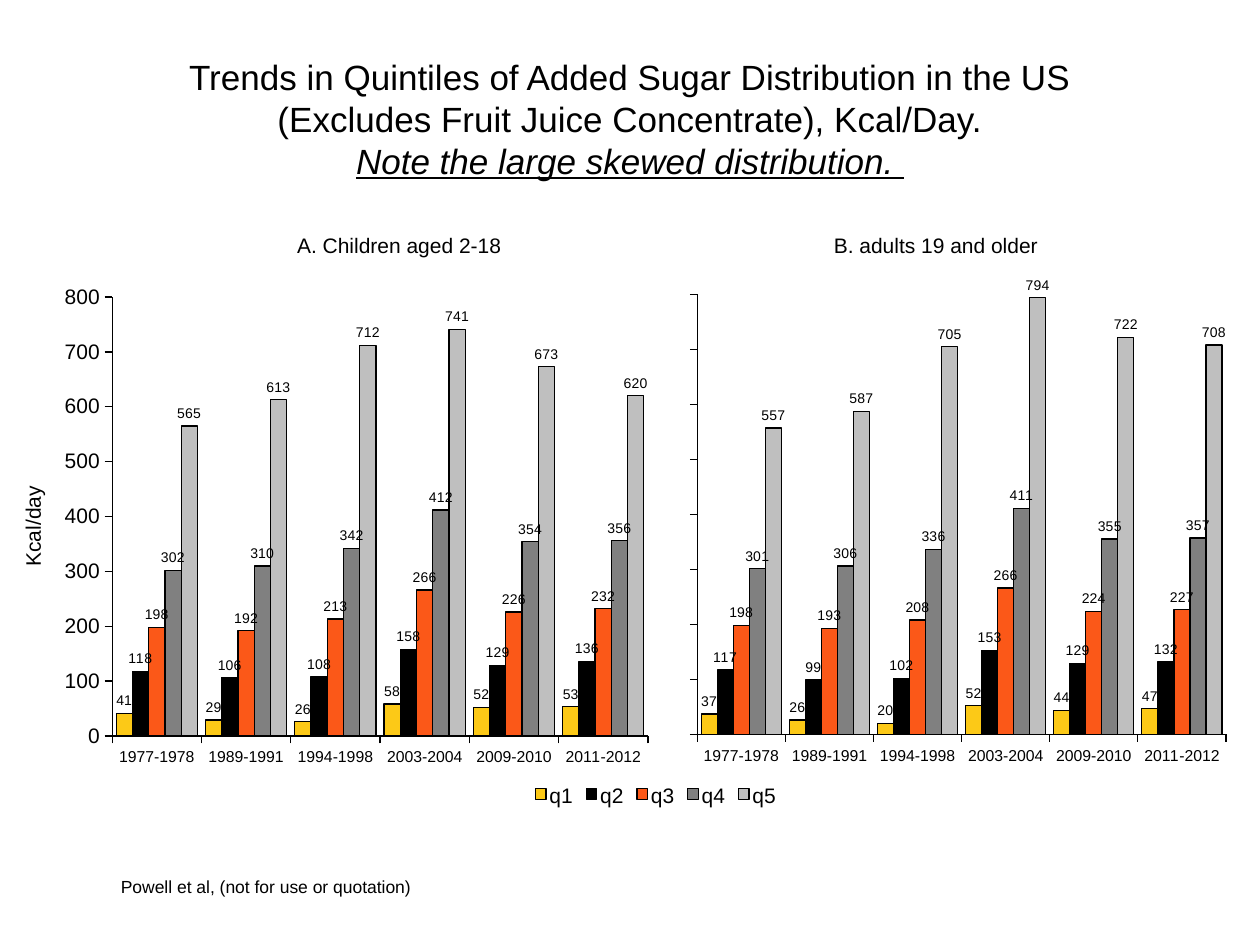
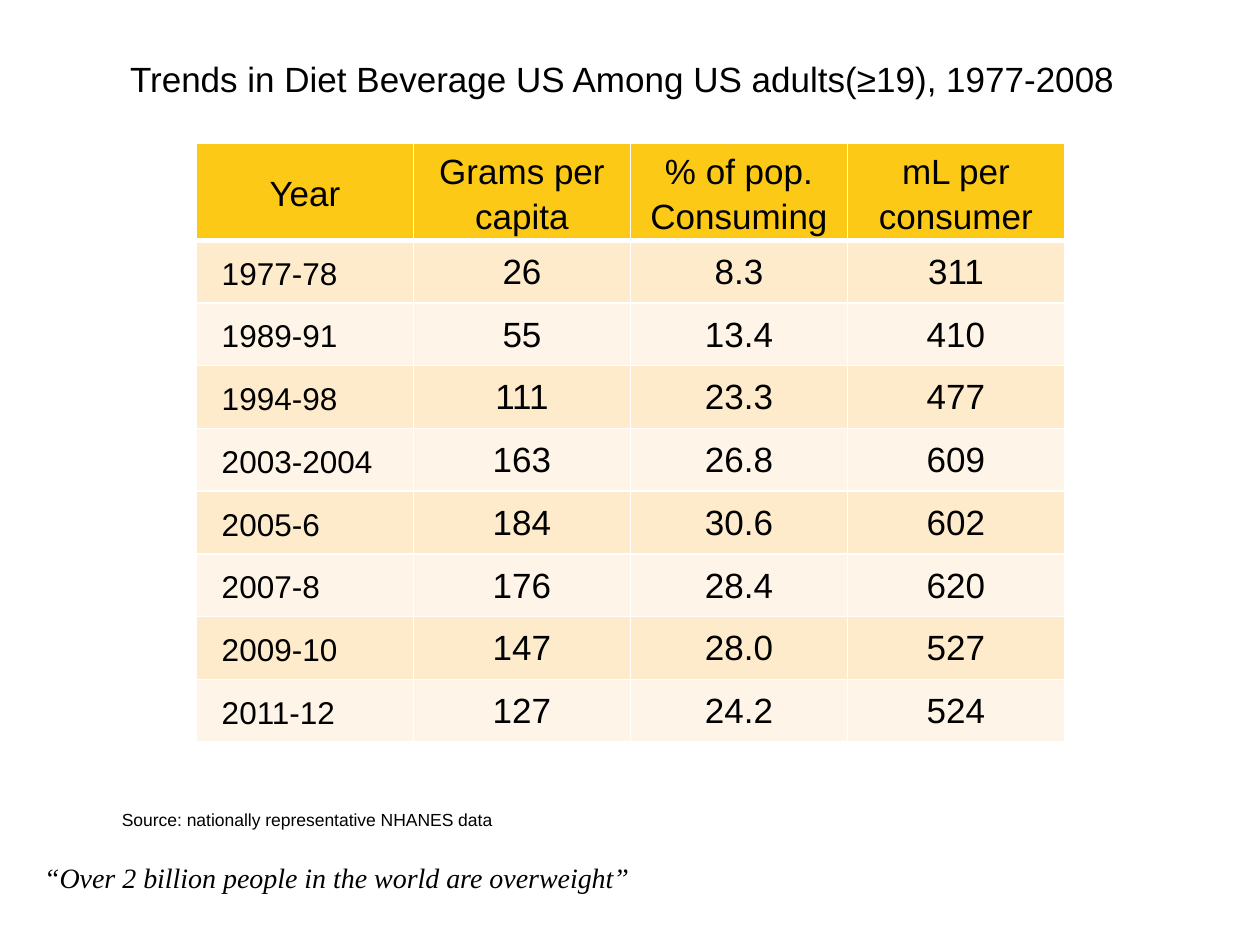
from dataclasses import dataclass

import pptx
import pptx.chart.data
import pptx.dml.color
import pptx.enum.chart
import pptx.enum.shapes
import pptx.enum.text
import pptx.oxml
import pptx.oxml.ns
import pptx.util
from pptx.util import Pt

RGB = pptx.dml.color.RGBColor.from_string
ALIGN = pptx.enum.text.PP_ALIGN
ANCHOR = pptx.enum.text.MSO_ANCHOR


@dataclass(frozen=True)
class Theme:
    font: str = "Arial"
    quote_font: str = "Times New Roman"
    ink: str = "000000"
    border: str = "FFFFFF"
    header_fill: str = "FCC917"
    row_fills: tuple[str, ...] = ("FEEBCC", "FEF5E8")
    quintile_fills: tuple[str, ...] = ("FCC917", "000000", "FB5818", "808080", "BFBFBF")
    title: float = 20
    row_label: float = 18
    quote: float = 16
    caption: float = 12
    note: float = 10
    category: float = 9
    data_label: float = 8
    outline: float = 0.75


THEME = Theme()


@dataclass(frozen=True)
class Box:
    """Position and size in points."""
    left: float
    top: float
    width: float
    height: float

    def lengths(self) -> tuple[Pt, ...]:
        return Pt(self.left), Pt(self.top), Pt(self.width), Pt(self.height)


@dataclass(frozen=True)
class TextRun:
    text: str
    size: float
    font: str = THEME.font
    italic: bool = False
    underline: bool = False


@dataclass(frozen=True)
class QuintileChart:
    box: Box
    plot: tuple[float, float, float, float]
    quintiles: tuple[tuple[int, ...], ...]
    axis_title: str = ""


SURVEY_YEARS = ("1977-1978", "1989-1991", "1994-1998", "2003-2004", "2009-2010", "2011-2012")
QUINTILE_NAMES = ("q1", "q2", "q3", "q4", "q5")

ADULTS = QuintileChart(
    Box(332.6, 149, 387.4, 305.3), (0.17, 0.063, 0.78, 0.824),
    ((37, 26, 20, 52, 44, 47),
     (117, 99, 102, 153, 129, 132),
     (198, 193, 208, 266, 224, 227),
     (301, 306, 336, 411, 355, 357),
     (557, 587, 705, 794, 722, 708)))
CHILDREN = QuintileChart(
    Box(6.5, 137.5, 386.6, 313.2), (0.149, 0.103, 0.792, 0.801),
    ((41, 29, 26, 58, 52, 53),
     (118, 106, 108, 158, 129, 136),
     (198, 192, 213, 266, 226, 232),
     (302, 310, 342, 412, 354, 356),
     (565, 613, 712, 741, 673, 620)),
    axis_title="Kcal/day")

BEVERAGE_HEADER = ("Year", "Grams per capita", "% of pop. Consuming", "mL per consumer")
BEVERAGE_ROWS = (
    ("1977-78", "26", "8.3", "311"),
    ("1989-91", "55", "13.4", "410"),
    ("1994-98", "111", "23.3", "477"),
    ("2003-2004", "163", "26.8", "609"),
    ("2005-6", "184", "30.6", "602"),
    ("2007-8", "176", "28.4", "620"),
    ("2009-10", "147", "28.0", "527"),
    ("2011-12", "127", "24.2", "524"),
)


def style_font(font, size: float, name: str = THEME.font) -> None:
    font.name = name
    font.size = Pt(size)
    font.bold = False
    font.color.rgb = RGB(THEME.ink)


def add_run(paragraph, piece: TextRun) -> None:
    run = paragraph.add_run()
    run.text = piece.text
    style_font(run.font, piece.size, piece.font)
    if piece.italic:
        run.font.italic = True
    if piece.underline:
        run.font.underline = True


def set_margins(target, left: float, top: float, right: float, bottom: float) -> None:
    target.margin_left, target.margin_top = Pt(left), Pt(top)
    target.margin_right, target.margin_bottom = Pt(right), Pt(bottom)


def add_text(shapes, box: Box, *lines: TextRun, align=ALIGN.LEFT, anchor=ANCHOR.TOP,
             wrap: bool = False, margins=(7.2, 3.6, 7.2, 3.6)) -> None:
    """Add one paragraph whose lines are parted by line breaks."""
    frame = shapes.add_textbox(*box.lengths()).text_frame
    frame.word_wrap = wrap
    frame.vertical_anchor = anchor
    set_margins(frame, *margins)
    paragraph = frame.paragraphs[0]
    paragraph.alignment = align
    for index, line in enumerate(lines):
        if index:
            paragraph.add_line_break()
        add_run(paragraph, line)


def add_title(slide, box: Box, *lines: TextRun) -> None:
    add_text(slide.shapes, box, *lines, align=ALIGN.CENTER, anchor=ANCHOR.MIDDLE, wrap=True)


def outline(line) -> None:
    line.color.rgb = RGB(THEME.ink)
    line.width = Pt(THEME.outline)


def fix_plot_area(chart, plot: tuple[float, ...]) -> None:
    """Place the inner plot area by fractions of the chart's size."""
    area = chart._chartSpace.chart.plotArea
    for old in area.findall(pptx.oxml.ns.qn("c:layout")):
        area.remove(old)
    places = "".join(f'<c:{tag} val="{value}"/>' for tag, value in zip("xywh", plot))
    area.insert(0, pptx.oxml.parse_xml(
        f'<c:layout {pptx.oxml.ns.nsdecls("c")}><c:manualLayout><c:layoutTarget val="inner"/>'
        f'<c:xMode val="edge"/><c:yMode val="edge"/>{places}</c:manualLayout></c:layout>'))


def add_quintile_chart(slide, group: QuintileChart) -> None:
    data = pptx.chart.data.CategoryChartData(number_format="#,##0")
    data.categories = SURVEY_YEARS
    for name, values in zip(QUINTILE_NAMES, group.quintiles):
        data.add_series(name, values)
    chart = slide.shapes.add_chart(
        pptx.enum.chart.XL_CHART_TYPE.COLUMN_CLUSTERED, *group.box.lengths(), data).chart
    chart.has_legend = False
    chart.has_title = False
    style_font(chart.font, THEME.note)
    fix_plot_area(chart, group.plot)

    years, kcal = chart.category_axis, chart.value_axis
    for axis, size in ((years, THEME.category), (kcal, THEME.caption)):
        axis.has_major_gridlines = False
        axis.major_tick_mark = pptx.enum.chart.XL_TICK_MARK.OUTSIDE
        style_font(axis.tick_labels.font, size)
        outline(axis.format.line)
    kcal.minimum_scale, kcal.maximum_scale, kcal.major_unit = 0, 800, 100
    if group.axis_title:
        frame = kcal.axis_title.text_frame
        add_run(frame.paragraphs[0], TextRun(group.axis_title, THEME.caption))
        frame._txBody.bodyPr.set("rot", "-5400000")
        frame._txBody.bodyPr.set("vert", "horz")
    else:
        kcal.tick_label_position = pptx.enum.chart.XL_TICK_LABEL_POSITION.NONE

    columns = chart.plots[0]
    columns.gap_width, columns.overlap = 50, 0
    columns.vary_by_categories = False
    for series, fill in zip(columns.series, THEME.quintile_fills):
        series.format.fill.solid()
        series.format.fill.fore_color.rgb = RGB(fill)
        outline(series.format.line)
        labels = series.data_labels
        labels.show_value = True
        labels.number_format, labels.number_format_is_linked = "#,##0", False
        labels.position = pptx.enum.chart.XL_LABEL_POSITION.OUTSIDE_END
        style_font(labels.font, THEME.data_label)


def add_legend(slide, left: float, top: float, step: float) -> None:
    shapes = slide.shapes.add_group_shape().shapes
    for index, (name, fill) in enumerate(zip(QUINTILE_NAMES, THEME.quintile_fills)):
        x = left + index * step
        swatch = shapes.add_shape(pptx.enum.shapes.MSO_SHAPE.RECTANGLE,
                                  *Box(x, top, 6, 6).lengths())
        swatch.shadow.inherit = False
        swatch.fill.solid()
        swatch.fill.fore_color.rgb = RGB(fill)
        outline(swatch.line)
        add_text(shapes, Box(x + 8, top - 3.6, 13.5, 14.4), TextRun(name, THEME.caption),
                 margins=(0, 0, 0, 0))


def set_borders(cell, bottom: float) -> None:
    properties = cell._tc.get_or_add_tcPr()
    for side, width in (("L", 1), ("R", 1), ("T", 1), ("B", bottom)):
        properties.append(pptx.oxml.parse_xml(
            f'<a:ln{side} {pptx.oxml.ns.nsdecls("a")} w="{Pt(width)}"><a:solidFill>'
            f'<a:srgbClr val="{THEME.border}"/></a:solidFill></a:ln{side}>'))


def fill_cell(cell, text: str, row: int, column: int) -> None:
    is_header, is_year = row == 0, row > 0 and column == 0
    set_borders(cell, bottom=3 if is_header else 1)
    cell.fill.solid()
    cell.fill.fore_color.rgb = RGB(
        THEME.header_fill if is_header else THEME.row_fills[(row - 1) % 2])
    cell.vertical_anchor = ANCHOR.MIDDLE
    if is_header:
        set_margins(cell, 5.4, 0, 5.4, 0)
    elif is_year:
        set_margins(cell, 14.4, 3.6, 3.6, 3.6)
    else:
        set_margins(cell, 0.75, 0.75, 0.75, 0)
    paragraph = cell.text_frame.paragraphs[0]
    paragraph.alignment = ALIGN.LEFT if is_year else ALIGN.CENTER
    if is_header or is_year:
        paragraph.line_spacing = 1.15
    add_run(paragraph, TextRun(text, THEME.row_label if is_year else THEME.title))


def add_beverage_table(slide, box: Box, header_height: float) -> None:
    rows = (BEVERAGE_HEADER, *BEVERAGE_ROWS)
    table = slide.shapes.add_table(len(rows), len(BEVERAGE_HEADER), *box.lengths()).table
    table.horz_banding = False
    for column in table.columns:
        column.width = Pt(box.width / len(BEVERAGE_HEADER))
    row_height = (box.height - header_height) / len(BEVERAGE_ROWS)
    for row, texts in enumerate(rows):
        table.rows[row].height = Pt(row_height if row else header_height)
        for column, text in enumerate(texts):
            fill_cell(table.cell(row, column), text, row, column)


def build_sugar_slide(slide) -> None:
    add_quintile_chart(slide, ADULTS)
    add_quintile_chart(slide, CHILDREN)
    add_title(
        slide, Box(36, 23.8, 648, 87.8),
        TextRun("Trends in Quintiles of Added Sugar Distribution in the US", THEME.title),
        TextRun("(Excludes Fruit Juice Concentrate), Kcal/Day.", THEME.title),
        TextRun("Note the large skewed distribution. ", THEME.title, italic=True, underline=True))
    add_legend(slide, 306, 450.7, 29)
    for left, caption in ((162.7, "A. Children aged 2-18"), (469.4, "B. adults 19 and older")):
        add_text(slide.shapes, Box(left, 129.6, 131.8, 21.6), TextRun(caption, THEME.caption))
    add_text(slide.shapes, Box(62, 496.8, 182, 19.4),
             TextRun("Powell et al, (not for use or quotation)", THEME.note))


def build_beverage_slide(slide) -> None:
    add_text(slide.shapes, Box(0, 480.2, 720, 41.8),
             TextRun("“Over 2 billion people in the world are overweight”", THEME.quote,
                     THEME.quote_font, italic=True),
             anchor=ANCHOR.MIDDLE, wrap=True, margins=(25.2, 3.6, 7.2, 3.6))
    add_title(slide, Box(31.7, 0, 648, 90),
              TextRun("Trends in Diet Beverage US Among US adults(≥19), 1977-2008", THEME.title))
    add_beverage_table(slide, Box(112.3, 82, 496, 335.2), header_height=48.2)
    add_text(slide.shapes, Box(62.6, 458.6, 227.5, 19.4),
             TextRun("Source: nationally representative NHANES data", THEME.note))


def main() -> None:
    deck = pptx.Presentation()
    deck.slide_width, deck.slide_height = Pt(720), Pt(540)
    for build in (build_sugar_slide, build_beverage_slide):
        build(deck.slides.add_slide(deck.slide_layouts[6]))
    deck.save("out.pptx")


if __name__ == "__main__":
    main()
